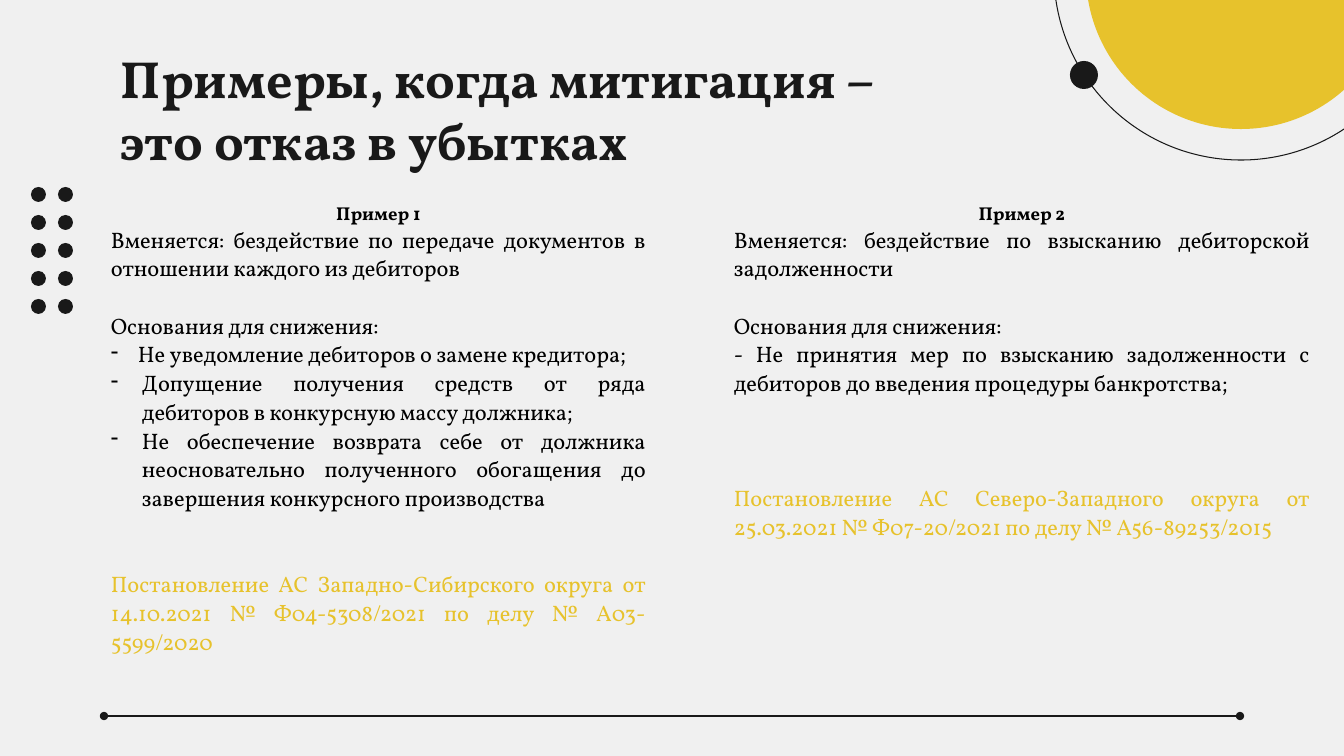
"""Build a slide with two examples of mitigation leading to refused damages."""
from lxml import etree
from pptx import Presentation
from pptx.dml.color import RGBColor
from pptx.enum.shapes import MSO_CONNECTOR, MSO_SHAPE
from pptx.enum.text import MSO_ANCHOR, PP_ALIGN
from pptx.oxml.ns import qn
from pptx.util import Emu, Pt

CENTER, JUSTIFY, LEFT = PP_ALIGN.CENTER, PP_ALIGN.JUSTIFY, PP_ALIGN.LEFT
TOP = MSO_ANCHOR.TOP
OVAL = MSO_SHAPE.OVAL
STRAIGHT = MSO_CONNECTOR.STRAIGHT

FONT = "Vollkorn"
PAPER, INK, BLACK, GOLD = "F0F0F0", "191919", "000000", "E7C22C"
SLIDE_WIDTH, SLIDE_HEIGHT = 1344, 756
EMU_PER_PX = 12192000 / SLIDE_WIDTH
LINE_SPACING = 1.07
BODY_LINE_PT = 20.5

TITLE = "Примеры, когда митигация –\vэто отказ в убытках"
TITLE_BOX = (108, 33, 1132, 85)

# (text, empty lines above, hanging indent in px, colour)
COLUMNS = [
    ((101, 195, 555, 496), "Пример 1", [
        ("Вменяется: бездействие по передаче документов в отношении каждого из дебиторов", 0, 0, BLACK),
        ("Основания для снижения:", 1, 0, BLACK),
        ("Не уведомление дебиторов о замене кредитора;", 0, 27, BLACK),
        ("Допущение получения средств от ряда дебиторов в конкурсную массу должника;", 0, 31, BLACK),
        ("Не обеспечение возврата себе от должника неосновательно полученного обогащения "
         "до завершения конкурсного производства", 0, 31, BLACK),
        ("Постановление АС Западно-Сибирского округа от 14.10.2021 № Ф04-5308/2021 "
         "по делу № А03-5599/2020", 2, 0, GOLD),
    ]),
    ((724, 195, 596, 353), "Пример 2", [
        ("Вменяется: бездействие по взысканию дебиторской задолженности", 0, 0, BLACK),
        ("Основания для снижения:", 1, 0, BLACK),
        ("- Не принятия мер по взысканию задолженности с дебиторов до введения "
         "процедуры банкротства;", 0, 0, BLACK),
        ("Постановление АС Северо-Западного округа от 25.03.2021 № Ф07-20/2021 "
         "по делу № А56-89253/2015", 3, 0, GOLD),
    ]),
]

RING = (1054, -214, 374)
RING_DOT = (1070, 61, 28)
SUN = (1086, -181, 310)
DOT_ROWS, DOT_COLUMNS = 5, 2
DOT_LEFT, DOT_TOP, DOT_SIZE = 31, 187, 15
DOT_STEP_X, DOT_STEP_Y = 27, 28
RULE = (104, 716, 1240, 716)


def px(length):
    return Emu(round(length * EMU_PER_PX))


def color(value):
    return RGBColor.from_string(value)


def add_circle(page, left, top, size, fill=None):
    circle = page.shapes.add_shape(OVAL, px(left), px(top), px(size), px(size))
    circle.shadow.inherit = False
    if fill:
        circle.fill.solid()
        circle.fill.fore_color.rgb = color(fill)
        circle.line.fill.background()
    else:
        circle.fill.background()
        circle.line.color.rgb = color(INK)
        circle.line.width = Pt(0.75)


def add_rule(page):
    rule = page.shapes.add_connector(STRAIGHT, *map(px, RULE))
    rule.line.color.rgb = color(INK)
    rule.line.width = Pt(0.75)
    for end in ("a:headEnd", "a:tailEnd"):
        etree.SubElement(rule.line._get_or_add_ln(), qn(end), type="oval")
    etree.SubElement(rule._element.spPr, qn("a:effectLst"))


def add_frame(page, bounds):
    frame = page.shapes.add_textbox(*map(px, bounds)).text_frame
    frame.word_wrap = True
    frame.vertical_anchor = TOP
    return frame


def format_para(para, size, fill, bold, align):
    para.alignment = align
    for span in para.runs:
        span.font.name = FONT
        span.font.size = Pt(size)
        span.font.bold = bold
        span.font.color.rgb = color(fill)


def add_dash(para, indent):
    properties = para._p.get_or_add_pPr()
    properties.set("marL", str(px(indent)))
    properties.set("indent", str(-px(indent)))
    etree.SubElement(properties, qn("a:buChar"), char="-")


def add_title(page):
    frame = add_frame(page, TITLE_BOX)
    frame.margin_left = frame.margin_right = px(13)
    frame.margin_top = frame.margin_bottom = px(13)
    frame.text = TITLE
    format_para(frame.paragraphs[0], 37.3, INK, True, LEFT)


def add_column(page, bounds, heading, entries):
    frame = add_frame(page, bounds)
    frame.text = heading
    format_para(frame.paragraphs[0], 13.3, BLACK, True, CENTER)
    frame.paragraphs[0].line_spacing = LINE_SPACING
    for text, gap_lines, indent, fill in entries:
        para = frame.add_paragraph()
        para.text = text
        format_para(para, 16, fill, False, JUSTIFY)
        para.line_spacing = LINE_SPACING
        para.space_before = Pt(gap_lines * BODY_LINE_PT)
        if indent:
            add_dash(para, indent)


def main():
    deck = Presentation()
    deck.slide_width, deck.slide_height = px(SLIDE_WIDTH), px(SLIDE_HEIGHT)
    page = deck.slides.add_slide(deck.slide_layouts[6])
    page.background.fill.solid()
    page.background.fill.fore_color.rgb = color(PAPER)

    add_title(page)
    add_rule(page)
    add_circle(page, *RING)
    add_circle(page, *RING_DOT, INK)
    add_circle(page, *SUN, GOLD)
    for row in range(DOT_ROWS):
        for column in range(DOT_COLUMNS):
            add_circle(page, DOT_LEFT + column * DOT_STEP_X,
                       DOT_TOP + row * DOT_STEP_Y, DOT_SIZE, INK)
    for bounds, heading, entries in COLUMNS:
        add_column(page, bounds, heading, entries)
    deck.save("out.pptx")


if __name__ == "__main__":
    main()
